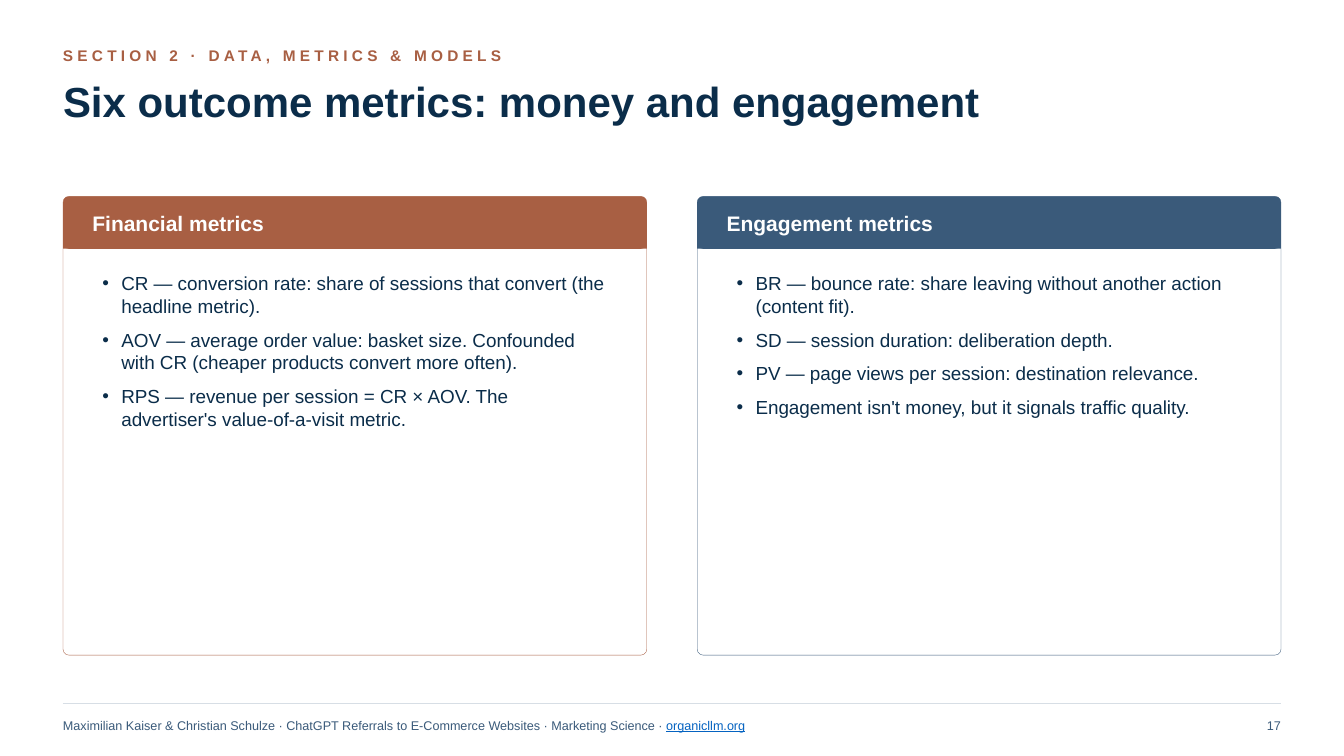
import pptx
import pptx.util
import pptx.dml.color
import pptx.enum.shapes
import pptx.enum.text
import lxml.etree

RGB = pptx.dml.color.RGBColor
NAVY = RGB(0x0B, 0x2D, 0x4A)
RUST = RGB(0xA8, 0x5F, 0x43)
SLATE = RGB(0x3A, 0x5A, 0x7A)
WHITE = RGB(0xFF, 0xFF, 0xFF)
RULE = RGB(0xD7, 0xDE, 0xE5)
LINK = RGB(0x05, 0x63, 0xC1)
SHAPE = pptx.enum.shapes.MSO_SHAPE
ANCHOR = pptx.enum.text.MSO_ANCHOR
ALIGN = pptx.enum.text.PP_ALIGN
PX = 9525
LEFT, RIGHT = 60, 1220
WIDE = RIGHT - LEFT
TOP, CARD, GAP, PAD, HEAD = 187, 556, 48, 28, 50

prs = pptx.Presentation()
prs.slide_width = 1280 * PX
prs.slide_height = 720 * PX
slide = prs.slides.add_slide(prs.slide_layouts[3])
shapes = slide.shapes


def label(x, y, w, h, text, size, color, bold=False):
    box = shapes.add_textbox(x * PX, y * PX, w * PX, h * PX)
    frame = box.text_frame
    frame.word_wrap = True
    frame.vertical_anchor = ANCHOR.MIDDLE
    frame.margin_left = frame.margin_right = 0
    frame.margin_top = frame.margin_bottom = 0
    para = frame.paragraphs[0]
    para.text = text
    para.font.name = "Arial"
    para.font.size = pptx.util.Pt(size)
    para.font.bold = bold
    para.font.color.rgb = color
    for run in para.runs:
        run.font.color.rgb = color
    return para


def block(kind, x, y, h, fill, edge=None, round=None):
    form = shapes.add_shape(kind, x * PX, y * PX, CARD * PX, h * PX)
    form.shadow.inherit = False
    form.fill.solid()
    form.fill.fore_color.rgb = fill
    if edge is None:
        form.line.fill.background()
    else:
        form.line.color.rgb = edge
        form.line.width = pptx.util.Pt(0.25)
    if round is not None:
        form.adjustments[0] = round


# Heading
para = label(LEFT, 38, WIDE, 29, "SECTION 2 · DATA, METRICS & MODELS", 11, RUST, True)
para.runs[0].font._element.set("spc", "300")

title = shapes.title
title.left, title.top = LEFT * PX, 71 * PX
title.width, title.height = WIDE * PX, 91 * PX
frame = title.text_frame
frame.text = "Six outcome metrics: money and engagement"
frame.word_wrap = True
frame.auto_size = pptx.enum.text.MSO_AUTO_SIZE.NONE
frame.vertical_anchor = ANCHOR.TOP
frame.margin_left = frame.margin_right = 0
frame.margin_top = frame.margin_bottom = 0
para = frame.paragraphs[0]
para.alignment = ALIGN.LEFT
para.line_spacing = 1.02
font = para.runs[0].font
font.name = "Arial"
font.size = pptx.util.Pt(30)
font.bold = True
font.color.rgb = NAVY

# Metric cards
cards = [
    ("Financial metrics", RUST, [
        "CR — conversion rate: share of sessions that convert (the headline metric).",
        "AOV — average order value: basket size. Confounded with CR (cheaper products convert more often).",
        "RPS — revenue per session = CR × AOV. The advertiser's value-of-a-visit metric.",
    ]),
    ("Engagement metrics", SLATE, [
        "BR — bounce rate: share leaving without another action (content fit).",
        "SD — session duration: deliberation depth.",
        "PV — page views per session: destination relevance.",
        "Engagement isn't money, but it signals traffic quality.",
    ]),
]
for num, (name, color, items) in enumerate(cards):
    x = LEFT + num * (CARD + GAP)
    block(SHAPE.ROUNDED_RECTANGLE, x, TOP, 437, WHITE, color, 0.013)
    block(SHAPE.ROUNDED_RECTANGLE, x, TOP, HEAD, color, round=0.115)
    block(SHAPE.RECTANGLE, x, TOP + 6, HEAD - 6, color)
    label(x + PAD, TOP, CARD - 2 * PAD, HEAD, name, 15, WHITE, True)

    body = slide.placeholders[num + 1]
    body.left, body.top = (x + PAD) * PX, 254 * PX
    body.width, body.height = (CARD - 2 * PAD) * PX, 353 * PX
    # Bring the list in front of its card
    body.element.getparent().append(body.element)
    frame = body.text_frame
    frame.text = "\n".join(items)
    frame.word_wrap = True
    frame.auto_size = pptx.enum.text.MSO_AUTO_SIZE.NONE
    frame.vertical_anchor = ANCHOR.TOP
    for para in frame.paragraphs:
        props = para._p.get_or_add_pPr()
        props.set("marL", str(18 * PX))
        props.set("indent", str(-18 * PX))
        mark = lxml.etree.SubElement(props, pptx.oxml.ns.qn("a:buChar"))
        mark.set("char", "•")
        para.space_before = pptx.util.Pt(0)
        para.space_after = pptx.util.Pt(8)
        font = para.runs[0].font
        font.name = "Arial"
        font.size = pptx.util.Pt(13.5)
        font.color.rgb = NAVY

# Footer
rule = shapes.add_connector(pptx.enum.shapes.MSO_CONNECTOR.STRAIGHT,
                            LEFT * PX, 670 * PX, RIGHT * PX, 670 * PX)
rule.line.color.rgb = RULE
rule.line.width = pptx.util.Pt(0.5)
lxml.etree.SubElement(rule._element.spPr, pptx.oxml.ns.qn("a:effectLst"))

para = label(LEFT, 676, WIDE - 96, 29,
             "Maximilian Kaiser & Christian Schulze · ChatGPT Referrals to "
             "E-Commerce Websites · Marketing Science · ", 9, SLATE)
site = para.add_run()
site.text = "organicllm.org"
site.font.color.rgb = LINK
site.font.underline = True
para = label(RIGHT - 96, 676, 96, 29, "17", 9, SLATE)
para.alignment = ALIGN.RIGHT

# Run formats for every plain label
for box in shapes:
    if box.has_text_frame and not box.is_placeholder:
        for para in box.text_frame.paragraphs:
            for run in para.runs:
                run.font.name = "Arial"
                run.font.size = para.font.size
                run.font.bold = para.font.bold

prs.save("out.pptx")
